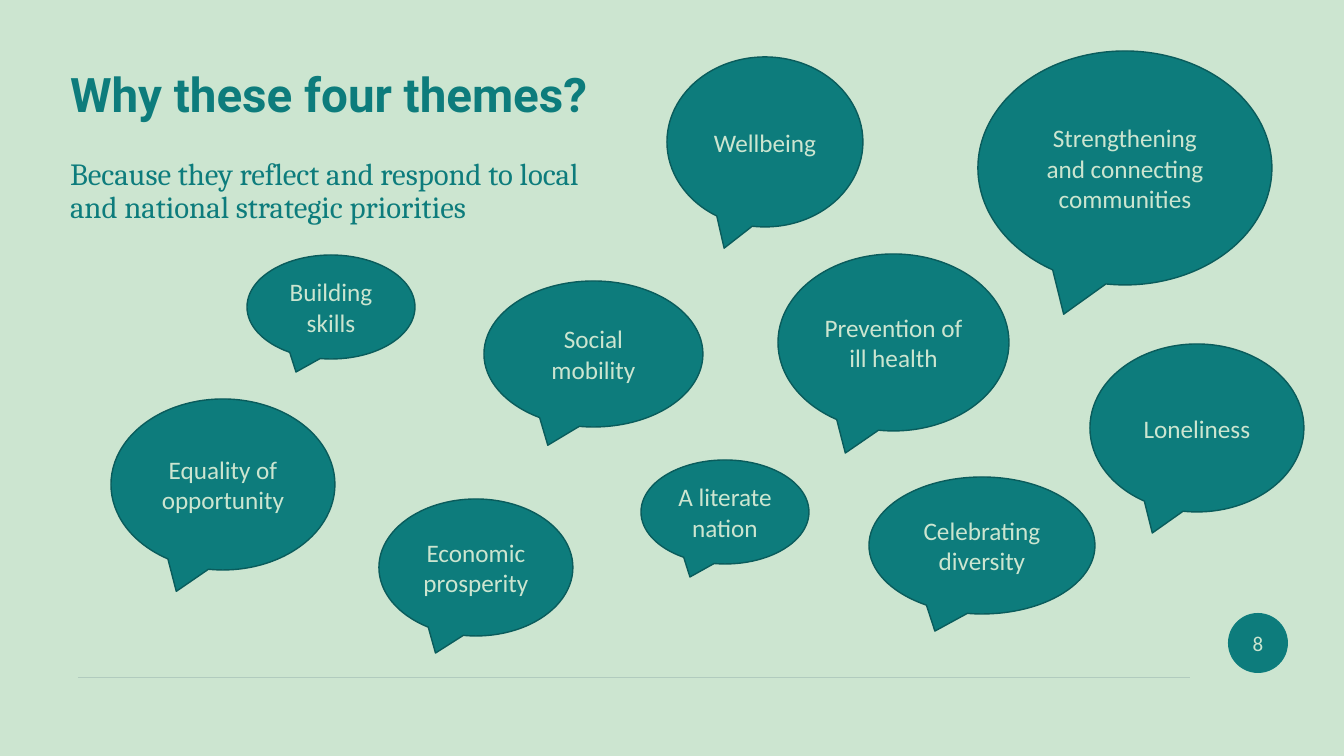
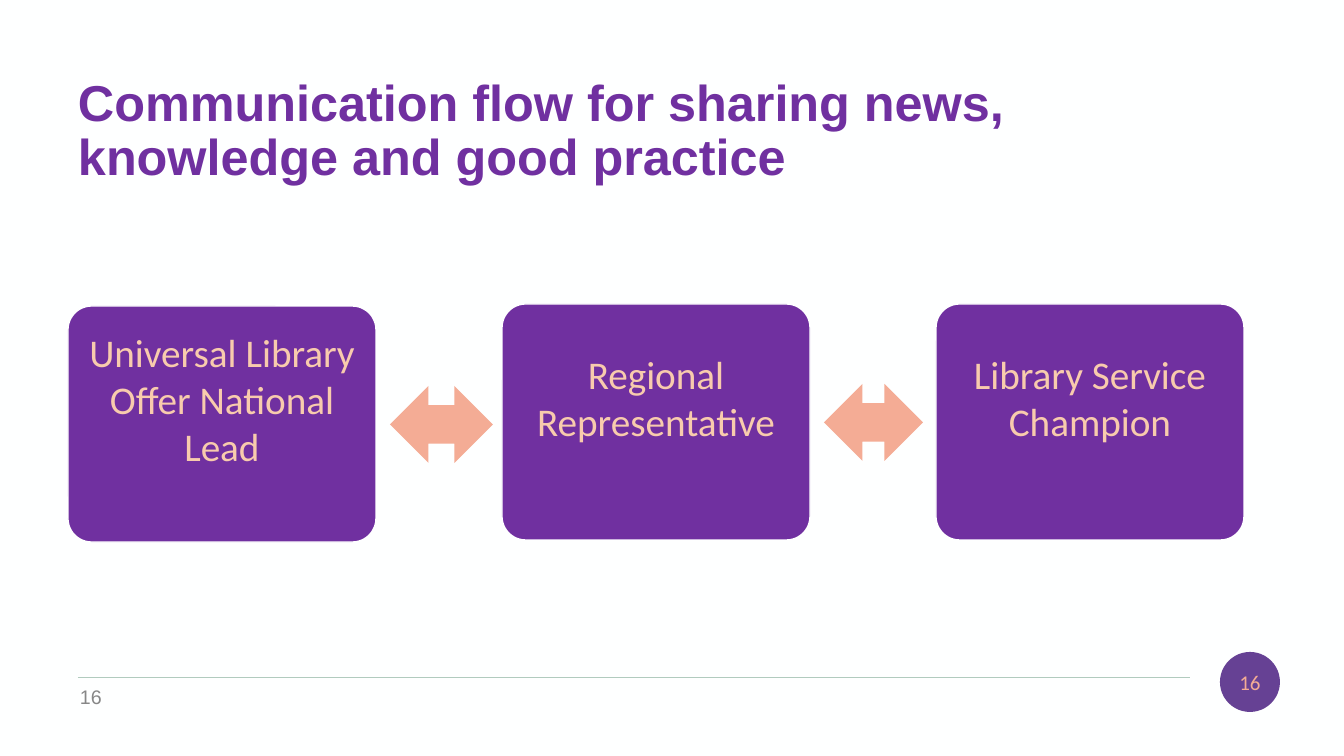
from lxml import etree
from pptx import Presentation
from pptx.dml.color import RGBColor
from pptx.enum.shapes import MSO_CONNECTOR, MSO_SHAPE as Shape
from pptx.enum.text import MSO_ANCHOR as Anchor, MSO_AUTO_SIZE, PP_ALIGN as Align
from pptx.oxml.ns import qn
from pptx.util import Emu, Pt

PX_PER_INCH = 100.8
PAGE_SIZE = (1344, 756)
TITLE_ONLY = 5

MINT, TEAL, DARK_TEAL = "CCE5D0", "0D7C7C", "0A5C5C"
PALE, PURPLE, MUTED_PURPLE = "FEFFFF", "7030A0", "664194"
SALMON, PEACH, GREY, RULE = "F4AC95", "F8CBAD", "878787", "B1CBBE"
BODY_FONT = "Calibri"

CALLOUTS = [
    ("Strengthening and connecting communities", (978, 51, 294, 234)),
    ("Prevention of ill health", (778, 254, 231, 177)),
    ("Wellbeing", (667, 57, 196, 170)),
    ("Loneliness", (1090, 344, 214, 168)),
    ("Building skills", (247, 255, 168, 104)),
    ("Social mobility", (484, 281, 219, 146)),
    ("A literate nation", (641, 460, 168, 104)),
    ("Economic prosperity", (379, 499, 194, 137)),
    ("Equality of opportunity", (111, 399, 224, 171)),
    ("Celebrating diversity", (869, 477, 226, 137)),
]


def px(length):
    return Emu(round(length * 914400 / PX_PER_INCH))


def colour(value):
    return RGBColor.from_string(value)


def set_frame(frame, anchor, insets=(10, 5, 10, 5)):
    """Insets run left, top, right, bottom."""
    frame.word_wrap = True
    frame.auto_size = MSO_AUTO_SIZE.NONE
    frame.vertical_anchor = anchor
    (frame.margin_left, frame.margin_top,
     frame.margin_right, frame.margin_bottom) = map(px, insets)


def write(frame, text, *, size, color, font=BODY_FONT, bold=False,
          align=Align.CENTER, spacing=1.0, before=0):
    """Fill the empty first paragraph, or append another one."""
    para = frame.add_paragraph() if frame.text else frame.paragraphs[0]
    para.alignment = align
    para.line_spacing = spacing
    para.space_before = Pt(before)
    span = para.add_run()
    span.text = text
    span.font.name = font
    span.font.size = Pt(size)
    span.font.bold = bold
    span.font.color.rgb = colour(color)


def add_box(page, kind, box, fill, line=None):
    shape = page.shapes.add_shape(kind, *map(px, box))
    shape.shadow.inherit = False
    shape.fill.solid()
    shape.fill.fore_color.rgb = colour(fill)
    if line:
        shape.line.color.rgb = colour(line)
        shape.line.width = Pt(1)
    else:
        shape.line.fill.background()
    return shape


def add_footer_rule(page):
    rule = page.shapes.add_connector(
        MSO_CONNECTOR.STRAIGHT, px(78), px(677), px(1190), px(677))
    rule.line.color.rgb = colour(RULE)
    rule.line.width = Pt(0.5)
    etree.SubElement(rule._element.spPr, qn("a:effectLst"))


def add_page(deck, background):
    page = deck.slides.add_slide(deck.slide_layouts[TITLE_ONLY])
    page.background.fill.solid()
    page.background.fill.fore_color.rgb = colour(background)
    add_footer_rule(page)
    return page


def add_title(page, text, box, **style):
    title = page.shapes.title
    title.left, title.top, title.width, title.height = map(px, box)
    set_frame(title.text_frame, Anchor.TOP)
    write(title.text_frame, text, bold=True, align=Align.LEFT, spacing=0.9, **style)
    return title.text_frame


def add_number_badge(page, number, left, top, fill, color):
    badge = add_box(page, Shape.OVAL, (left, top, 60, 60), fill)
    set_frame(badge.text_frame, Anchor.MIDDLE, (0, 0, 0, 0))
    write(badge.text_frame, number, size=15, color=color)


def add_callout(page, text, box):
    callout = add_box(page, Shape.OVAL_CALLOUT, box, TEAL, DARK_TEAL)
    set_frame(callout.text_frame, Anchor.MIDDLE)
    write(callout.text_frame, text, size=18, color=MINT)


def add_flow(page, roles, left, top):
    """Row of role cards with a two-way arrow in each gap."""
    width, height, gap = 308, 236, 126
    arrow_widths = (103, 99)
    for index, role in enumerate(roles):
        card_left = left + index * (width + gap)
        card_top = top + (2 if index == 0 else 0)
        card = add_box(page, Shape.ROUNDED_RECTANGLE,
                       (card_left, card_top, width, height), PURPLE, PALE)
        card.adjustments[0] = 0.1
        set_frame(card.text_frame, Anchor.MIDDLE, (8, 12, 8, 62))
        write(card.text_frame, role, size=28, color=PEACH)
        if index < len(arrow_widths):
            add_box(page, Shape.LEFT_RIGHT_ARROW,
                    (card_left + width + 14, card_top + 80, arrow_widths[index], 77),
                    SALMON)


def build_themes(deck):
    page = add_page(deck, MINT)
    frame = add_title(page, "Why these four themes?", (60, 66, 570, 162),
                      size=34, color=TEAL, font="Roboto")
    write(frame, "Because they reflect and respond to local and national strategic priorities",
          size=22, color=TEAL, font="Cambria", align=Align.LEFT, spacing=0.9, before=26)
    for text, box in CALLOUTS:
        add_callout(page, text, box)
    add_number_badge(page, "8", 1228, 613, TEAL, MINT)


def build_communication(deck):
    page = add_page(deck, PALE)
    add_title(page, "Communication flow for sharing news, knowledge and good practice",
              (68, 73, 1180, 130), size=36, color=PURPLE, font="Arial")
    number = page.shapes.add_textbox(*map(px, (70, 677, 102, 40)))
    set_frame(number.text_frame, Anchor.MIDDLE)
    write(number.text_frame, "16", size=14, color=GREY, font="Arial", align=Align.LEFT)
    add_flow(page, ("Universal Library Offer National Lead",
                    "Regional Representative", "Library Service Champion"), 68, 304)
    add_number_badge(page, "16", 1220, 652, MUTED_PURPLE, SALMON)


def main():
    deck = Presentation()
    deck.slide_width, deck.slide_height = map(px, PAGE_SIZE)
    build_themes(deck)
    build_communication(deck)
    deck.save("out.pptx")


if __name__ == "__main__":
    main()
